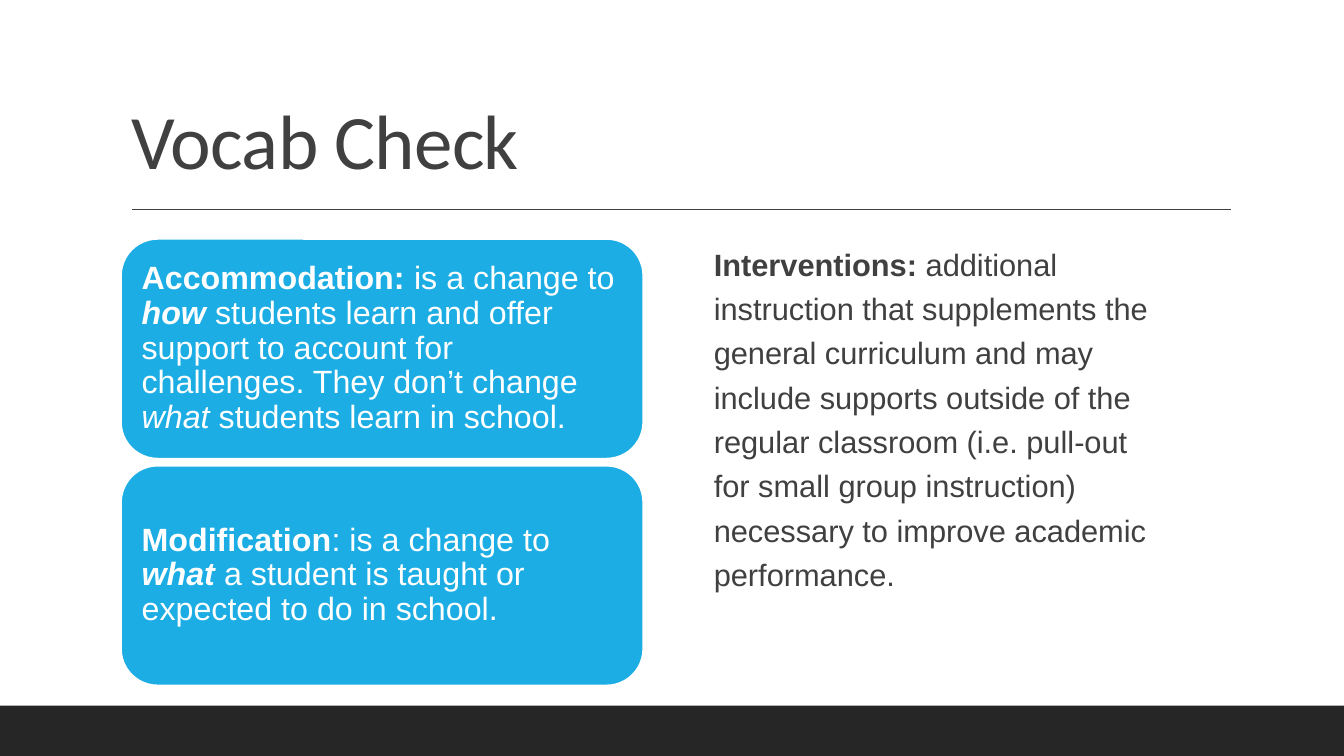
import pptx
import pptx.util
import pptx.dml.color
import pptx.enum.shapes
import pptx.enum.text
import pptx.oxml.ns
import lxml.etree

Inches = pptx.util.Inches
Pt = pptx.util.Pt
SHAPES = pptx.enum.shapes.MSO_SHAPE
ALIGN = pptx.enum.text.PP_ALIGN
ANCHOR = pptx.enum.text.MSO_ANCHOR

INK = "404040"
WHITE = "FFFFFF"
CARD_BLUE = "1CADE4"
FOOTER_BLACK = "262626"

# Each definition is a list of (text, bold, italic); some spaces do not break
ACCOMMODATION = [
    ("Accommodation: ", True, False),
    ("is a change to ", False, False),
    ("how ", True, True),
    ("students learn and offer support to account for challenges. "
     "They don’t change ", False, False),
    ("what", False, True),
    (" students learn in school.", False, False),
]
MODIFICATION = [
    ("Modification", True, False),
    (": is a change to ", False, False),
    ("what ", True, True),
    ("a student is taught or expected to do in school.", False, False),
]
INTERVENTIONS = [
    ("Interventions: ", True, False),
    ("additional instruction that supplements the general curriculum and may "
     "include supports outside of the regular classroom (i.e. pull-out for "
     "small group instruction) necessary to improve academic performance.",
     False, False),
]


def rgb(hex_color):
    return pptx.dml.color.RGBColor.from_string(hex_color)


def place(shape, left, top, width, height):
    shape.left, shape.top = Inches(left), Inches(top)
    shape.width, shape.height = Inches(width), Inches(height)


def style_font(font, name, size, color):
    font.name, font.size = name, Pt(size)
    font.color.rgb = rgb(color)


def write_definition(paragraph, pieces, size, color, spacing):
    paragraph.alignment = ALIGN.LEFT
    paragraph.line_spacing = spacing
    paragraph.space_before = Pt(0)
    for text, bold, italic in pieces:
        run = paragraph.add_run()
        run.text = text
        style_font(run.font, "Arial", size, color)
        run.font.bold, run.font.italic = bold, italic


def add_block(slide, preset, left, top, width, height, fill):
    block = slide.shapes.add_shape(
        preset, Inches(left), Inches(top), Inches(width), Inches(height))
    block.shadow.inherit = False
    block.fill.solid()
    block.fill.fore_color.rgb = rgb(fill)
    block.line.fill.background()
    return block


def add_rule(slide, left, right, y):
    rule = slide.shapes.add_connector(
        pptx.enum.shapes.MSO_CONNECTOR.STRAIGHT,
        Inches(left), Inches(y), Inches(right), Inches(y))
    rule.line.color.rgb = rgb(INK)
    rule.line.width = Pt(1)
    properties = rule._element.spPr
    lxml.etree.SubElement(properties, pptx.oxml.ns.qn("a:effectLst"))


def set_title(slide, text):
    title = slide.shapes.title
    place(title, 1.2, 0.31, 11, 1.59)
    frame = title.text_frame
    frame.text = text
    frame.auto_size = pptx.enum.text.MSO_AUTO_SIZE.NONE
    frame.vertical_anchor = ANCHOR.BOTTOM
    heading = frame.paragraphs[0]
    heading.alignment = ALIGN.LEFT
    heading.line_spacing = 0.9
    run = heading.runs[0]
    style_font(run.font, "Calibri", 55, INK)
    run._r.get_or_add_rPr().set("spc", "-50")


def add_card(slide, top, pieces):
    card = add_block(slide, SHAPES.ROUNDED_RECTANGLE,
                     1.2, top, 5.18, 2.18, CARD_BLUE)
    card.line.color.rgb = rgb(WHITE)
    card.line.width = Pt(1.25)
    frame = card.text_frame
    frame.word_wrap = True
    frame.vertical_anchor = ANCHOR.MIDDLE
    frame.margin_left = frame.margin_right = Inches(0.1)
    frame.margin_top = frame.margin_bottom = Inches(0.1)
    write_definition(frame.paragraphs[0], pieces, 23, WHITE, 0.9)


def set_body(slide, pieces):
    body = slide.placeholders[1]
    place(body, 6.88, 2.31, 4.75, 3.61)
    frame = body.text_frame
    frame.word_wrap = True
    frame.auto_size = pptx.enum.text.MSO_AUTO_SIZE.NONE
    frame.vertical_anchor = ANCHOR.TOP
    paragraph = frame.paragraphs[0]
    # Indented without a visible bullet
    properties = paragraph._p.get_or_add_pPr()
    properties.set("marL", str(Inches(0.1)))
    properties.set("indent", "0")
    lxml.etree.SubElement(properties, pptx.oxml.ns.qn("a:buNone"))
    write_definition(paragraph, pieces, 22, INK, 1.2)


def main():
    deck = pptx.Presentation()
    deck.slide_width, deck.slide_height = Inches(13.33), Inches(7.5)
    slide = deck.slides.add_slide(deck.slide_layouts[1])

    # Frame of the slide
    add_block(slide, SHAPES.RECTANGLE, 0, 7, 13.33, 0.5, FOOTER_BLACK)
    add_rule(slide, 1.31, 12.21, 2.08)

    # Title and definitions
    set_title(slide, "Vocab Check")
    for index, pieces in enumerate([ACCOMMODATION, MODIFICATION]):
        add_card(slide, 2.37 + index * 2.25, pieces)
    set_body(slide, INTERVENTIONS)

    deck.save("out.pptx")


if __name__ == "__main__":
    main()
